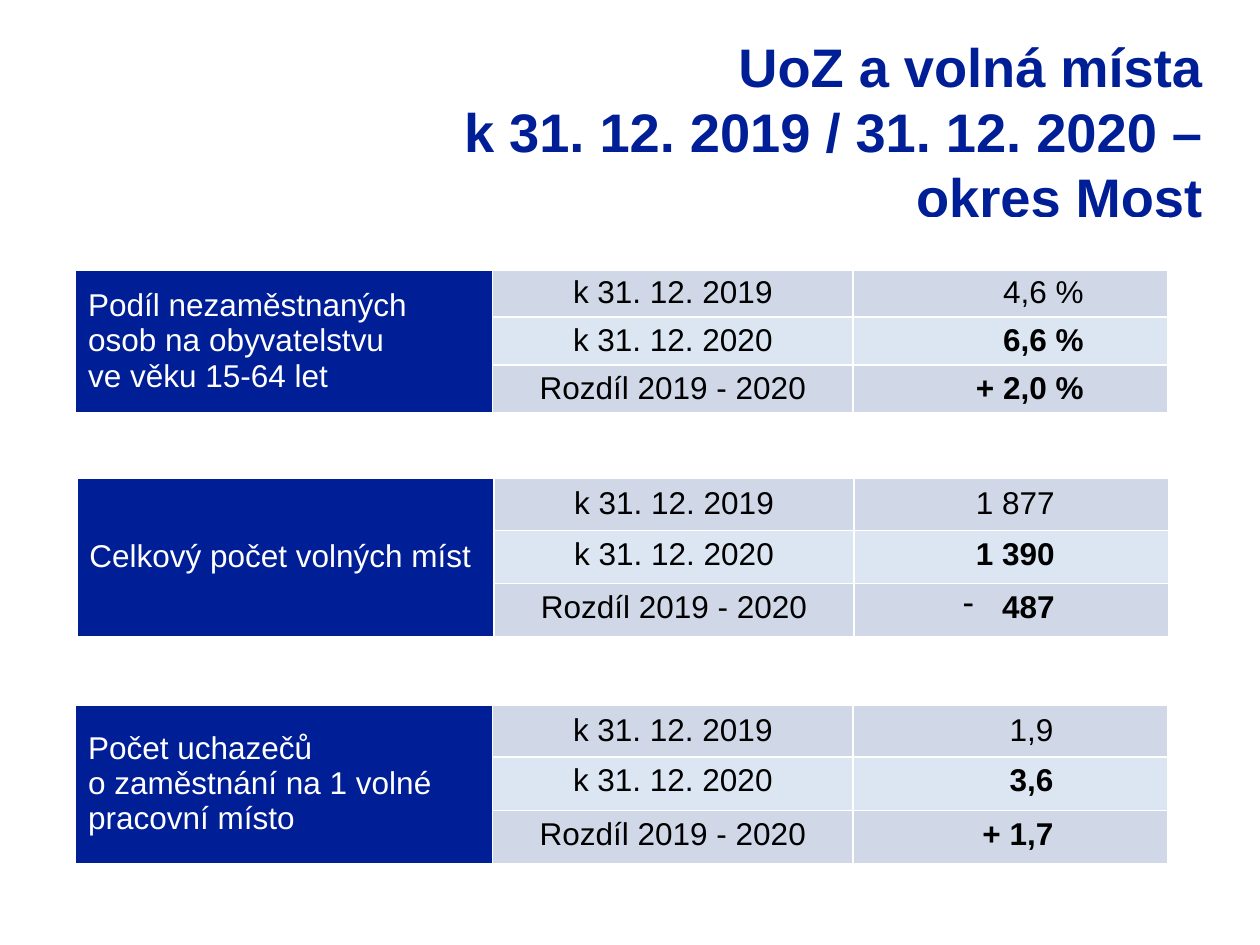
from lxml import etree
from pptx import Presentation
from pptx.dml.color import RGBColor
from pptx.enum.text import MSO_ANCHOR, MSO_AUTO_SIZE, PP_ALIGN
from pptx.oxml.ns import qn
from pptx.util import Inches, Pt

TOP, MIDDLE = MSO_ANCHOR.TOP, MSO_ANCHOR.MIDDLE
LEFT, CENTER, RIGHT = PP_ALIGN.LEFT, PP_ALIGN.CENTER, PP_ALIGN.RIGHT
NO_AUTOFIT = MSO_AUTO_SIZE.NONE

FONT = "Arial"
NAVY, WHITE, BLACK = "001E96", "FFFFFF", "000000"
BAND_DARK, BAND_LIGHT = "D0D8E8", "DCE6F2"
COLUMN_WIDTHS = (3.31, 2.86, 2.5)
HEADER_HEIGHT = 0.4
PERIODS = ("k 31. 12. 2019", "k 31. 12. 2020", "Rozdíl 2019 - 2020")

TITLE = ("UoZ a volná místa", "k 31. 12. 2019 / 31. 12. 2020 – okres Most")
INDICATORS = (
    {
        "box": (0.6, 1.73, 8.67, 1.51),
        "label": ("Podíl nezaměstnaných osob na obyvatelstvu \nve věku 15-64 let",),
        "values": ("4,6 %", "6,6 %", "+ 2,0 %"),
        "right_margin": 0.67,
    },
    {
        "box": (0.61, 3.38, 8.67, 1.67),
        "label": ("Celkový počet volných míst",),
        "values": ("1 877", "1 390", "487"),
        "right_margin": 0.91,
        "dash_last": True,
    },
    {
        "box": (0.6, 5.18, 8.67, 1.67),
        "label": ("Počet uchazečů", "o zaměstnání na 1 volné\npracovní místo"),
        "values": ("1,9", "3,6", "+ 1,7"),
        "right_margin": 0.91,
    },
)


def color(value):
    """Turn a hex string into a colour."""
    return RGBColor.from_string(value)


def write(text_frame, paragraphs, size, text_color, alignment, bold=False):
    """Write paragraphs run by run, breaking lines at each newline."""
    for index, text in enumerate(paragraphs):
        paragraph = text_frame.paragraphs[0] if index == 0 else text_frame.add_paragraph()
        paragraph.alignment = alignment
        for number, line in enumerate(text.split("\n")):
            if number:
                paragraph.add_line_break()
            run = paragraph.add_run()
            run.text = line
            run.font.name = FONT
            run.font.size = Pt(size)
            run.font.bold = bold
            run.font.color.rgb = color(text_color)


def add_dash_bullet(paragraph):
    """Give a paragraph a hanging dash bullet."""
    properties = paragraph._p.get_or_add_pPr()
    properties.set("marL", str(Inches(0.31)))
    properties.set("indent", str(-Inches(0.31)))
    etree.SubElement(properties, qn("a:buChar"), char="-")


def style_cell(cell, fill, bottom_width=1):
    """Set the white borders and the fill of a cell."""
    properties = cell._tc.get_or_add_tcPr()
    for side in "LRTB":
        width = bottom_width if side == "B" else 1
        line = etree.SubElement(properties, qn(f"a:ln{side}"), w=str(Pt(width)))
        line_fill = etree.SubElement(line, qn("a:solidFill"))
        etree.SubElement(line_fill, qn("a:srgbClr"), val=WHITE)
    cell.fill.solid()
    cell.fill.fore_color.rgb = color(fill)


def fill_title(slide, box):
    """Place the title in its box."""
    title = slide.shapes.title
    title.left, title.top, title.width, title.height = map(Inches, box)
    text_frame = title.text_frame
    text_frame.word_wrap = True
    text_frame.auto_size = NO_AUTOFIT
    text_frame.vertical_anchor = TOP
    write(text_frame, TITLE, 31, NAVY, RIGHT, True)


def add_indicator_table(slide, box, label, values, right_margin, dash_last=False):
    """Add a table comparing one indicator over both years."""
    row_count = len(PERIODS) + 1
    table = slide.shapes.add_table(row_count, len(COLUMN_WIDTHS), *map(Inches, box)).table
    table.first_row = table.horz_banding = False
    for column, width in zip(table.columns, COLUMN_WIDTHS):
        column.width = Inches(width)
    body_height = (box[3] - HEADER_HEIGHT) / len(PERIODS)
    for index, row in enumerate(table.rows):
        row.height = Inches(body_height if index else HEADER_HEIGHT)
        for column, cell in enumerate(row.cells):
            if index == 0:
                style_cell(cell, WHITE, 3)
                cell.text_frame.paragraphs[0].font.size = Pt(18)
            else:
                band = BAND_DARK if index % 2 else BAND_LIGHT
                style_cell(cell, band if column else NAVY)

    label_cell = table.cell(1, 0)
    label_cell.merge(table.cell(row_count - 1, 0))
    label_cell.vertical_anchor = MIDDLE
    write(label_cell.text_frame, label, 18, WHITE, LEFT)

    for index, (period, value) in enumerate(zip(PERIODS, values), 1):
        period_cell, value_cell = table.cell(index, 1), table.cell(index, 2)
        period_cell.vertical_anchor = value_cell.vertical_anchor = MIDDLE if index == 1 else TOP
        value_cell.margin_right = Inches(right_margin)
        write(period_cell.text_frame, (period,), 18, BLACK, CENTER)
        write(value_cell.text_frame, (value,), 18, BLACK, RIGHT, index > 1)
    if dash_last:
        add_dash_bullet(table.cell(row_count - 1, 2).text_frame.paragraphs[0])


def main():
    """Build the slide and save it."""
    presentation = Presentation()
    presentation.slide_width, presentation.slide_height = Inches(10), Inches(7.5)
    slide = presentation.slides.add_slide(presentation.slide_layouts.get_by_name("Title Only"))
    fill_title(slide, (2.4, 0.21, 7.24, 1.5))
    for indicator in INDICATORS:
        add_indicator_table(slide, **indicator)
    presentation.save("out.pptx")


if __name__ == "__main__":
    main()
